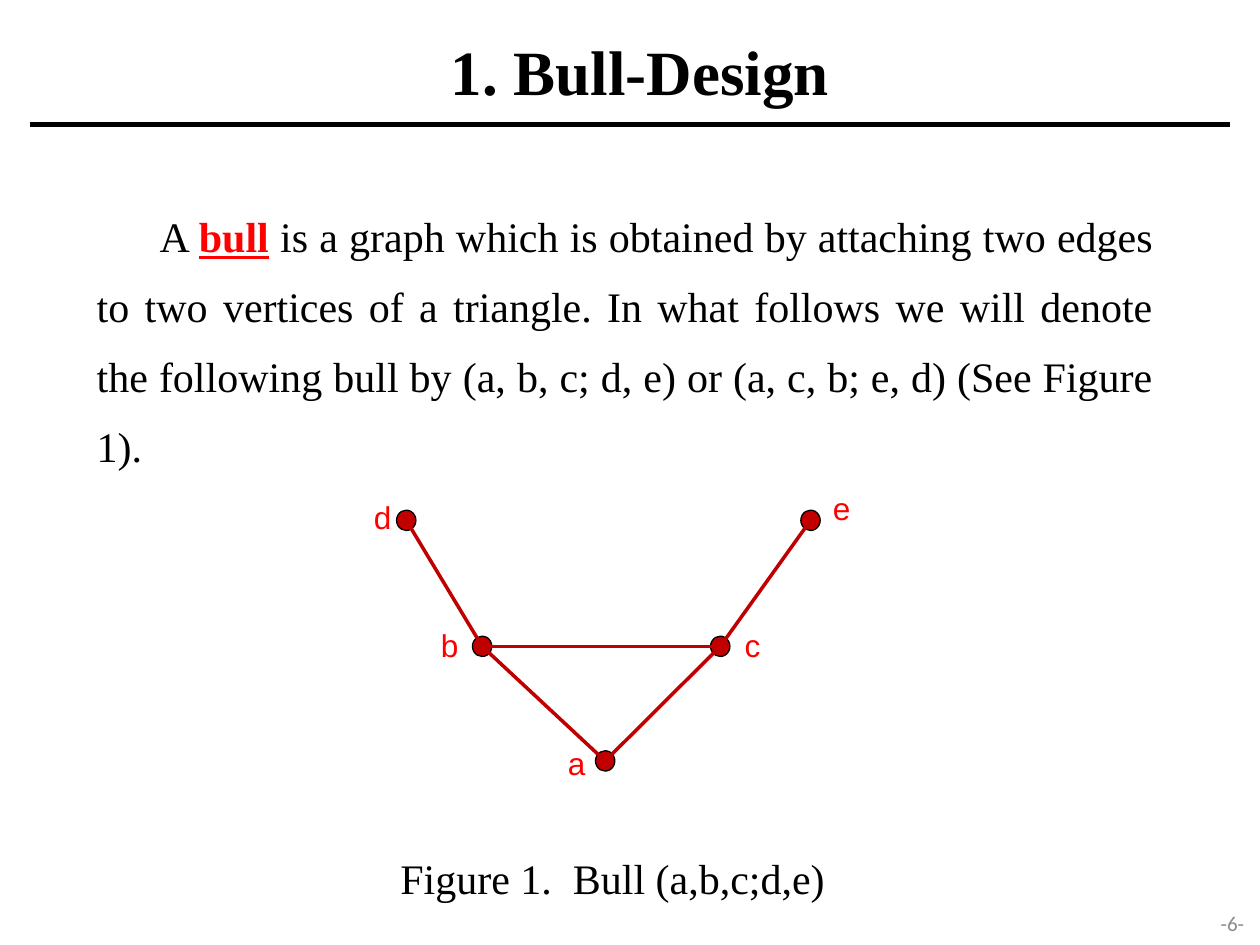
import pptx
import pptx.dml.color
import pptx.enum.shapes
import pptx.enum.text
import pptx.oxml.ns
import pptx.util
from lxml import etree

Cm = pptx.util.Cm
Pt = pptx.util.Pt
ALIGN = pptx.enum.text.PP_ALIGN
ANCHOR = pptx.enum.text.MSO_ANCHOR
SERIF = "Times New Roman"
BLACK, RED, DARK_RED, GREY = "000000", "FF0000", "C00000", "8C8C8C"


def color(hex_code):
    """Return the RGB colour for a hex string."""
    return pptx.dml.color.RGBColor.from_string(hex_code)


def style(run, size, font, hex_code, bold=False, underline=False):
    """Format one run."""
    run.font.size = Pt(size)
    run.font.name = font
    run.font.color.rgb = color(hex_code)
    run.font.bold = bold
    run.font.underline = underline


def add_text(slide, box, text, size, font, hex_code, align=ALIGN.LEFT, anchor=ANCHOR.TOP, bold=False):
    """Place a wrapped one-paragraph text in a box and return the paragraph."""
    frame = slide.shapes.add_textbox(*map(Cm, box)).text_frame
    frame.word_wrap = True
    frame.vertical_anchor = anchor
    frame.text = text
    paragraph = frame.paragraphs[0]
    paragraph.alignment = align
    for run in paragraph.runs:
        style(run, size, font, hex_code, bold)
    return paragraph


def add_line(slide, start, end, width, hex_code):
    """Draw a straight line without a shadow."""
    straight = pptx.enum.shapes.MSO_CONNECTOR.STRAIGHT
    line = slide.shapes.add_connector(straight, *map(Cm, (*start, *end)))
    line.line.width = Pt(width)
    line.line.color.rgb = color(hex_code)
    etree.SubElement(line._element.spPr, pptx.oxml.ns.qn("a:effectLst"))


def add_header(slide, left, top, width):
    """Place the title and the rule below it."""
    add_text(slide, (left + 1.3, top, 22, 1.8), "1. Bull-Design", 36, SERIF, BLACK, ALIGN.CENTER, bold=True)
    add_line(slide, (left, top + 1.98), (left + width, top + 1.98), 3, BLACK)


def add_definition(slide, left, top, width, height):
    """Place the justified definition with its key term highlighted."""
    paragraph = add_text(slide, (left, top, width, height), "", 24, SERIF, BLACK, ALIGN.JUSTIFY)
    paragraph.line_spacing = Pt(40)
    paragraph._p.get_or_add_pPr().set("indent", str(Cm(1.27)))
    parts = (
        ("A ", BLACK, False),
        ("bull", RED, True),
        (" is a graph which is obtained by attaching two edges to two vertices of a triangle. "
         "In what follows we will denote the following bull by (a, b, c; d, e) or (a, c, b; e, d) "
         "(See Figure 1).", BLACK, False),
    )
    for text, hex_code, is_term in parts:
        run = paragraph.add_run()
        run.text = text
        style(run, 24, SERIF, hex_code, is_term, is_term)


def add_bull_graph(slide, left, top):
    """Draw the vertices, edges and labels of the bull."""
    vertices = {"a": (4.91, 5.61), "b": (2.43, 3.3), "c": (7.23, 3.3), "d": (0.9, 0.76), "e": (9.05, 0.76)}
    labels = {"a": (3.91, 5.15), "b": (1.35, 2.77), "c": (7.47, 2.77), "d": (0, 0.18), "e": (9.25, 0)}
    centers = {name: (left + x, top + y) for name, (x, y) in vertices.items()}
    dot_width, dot_height = 0.39, 0.41
    for x, y in centers.values():
        dot = slide.shapes.add_shape(
            pptx.enum.shapes.MSO_SHAPE.OVAL,
            Cm(x - dot_width / 2), Cm(y - dot_height / 2), Cm(dot_width), Cm(dot_height))
        dot.shadow.inherit = False
        dot.fill.solid()
        dot.fill.fore_color.rgb = color(DARK_RED)
        dot.line.color.rgb = color(BLACK)
        dot.line.width = Pt(0.75)
    for start, end in ("ac", "ce", "ba", "bd", "bc"):
        add_line(slide, centers[start], centers[end], 2, DARK_RED)
    for name, (x, y) in labels.items():
        add_text(slide, (left + x, top + y, 1.14, 1.04), name, 18, "Arial", RED)


def add_caption(slide, left, top, width, height):
    """Place the figure caption."""
    add_text(slide, (left, top, width, height), "Figure 1.  Bull (a,b,c;d,e)", 24, SERIF, BLACK,
             ALIGN.CENTER, ANCHOR.MIDDLE)


def add_page_number(slide, left, top, width, height):
    """Place the page number."""
    add_text(slide, (left, top, width, height), "-6-", 12, "Calibri", GREY, ALIGN.RIGHT, ANCHOR.MIDDLE)


def main():
    """Build and save the slide."""
    deck = pptx.Presentation()
    deck.slide_width, deck.slide_height = Cm(25.4), Cm(19.05)
    slide = deck.slides.add_slide(deck.slide_layouts[6])
    add_definition(slide, 1.7, 3.73, 21.8, 5.8)
    add_page_number(slide, 23.5, 18.1, 1.83, 1.02)
    add_caption(slide, 3.5, 17.05, 17.7, 1.27)
    add_bull_graph(slide, 7.29, 9.73)
    add_header(slide, 0.6, 0.53, 24.2)
    deck.save("out.pptx")


if __name__ == "__main__":
    main()
